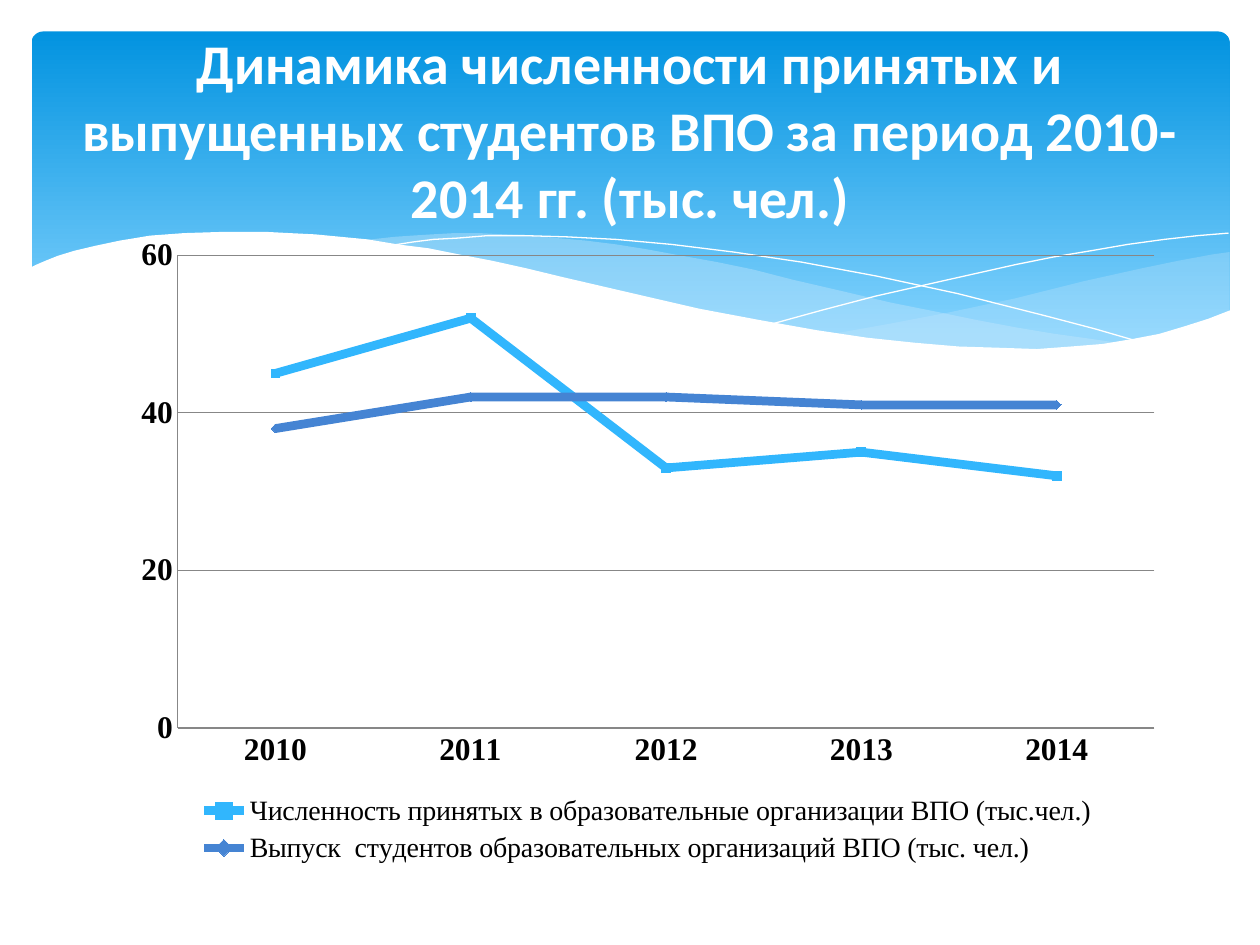
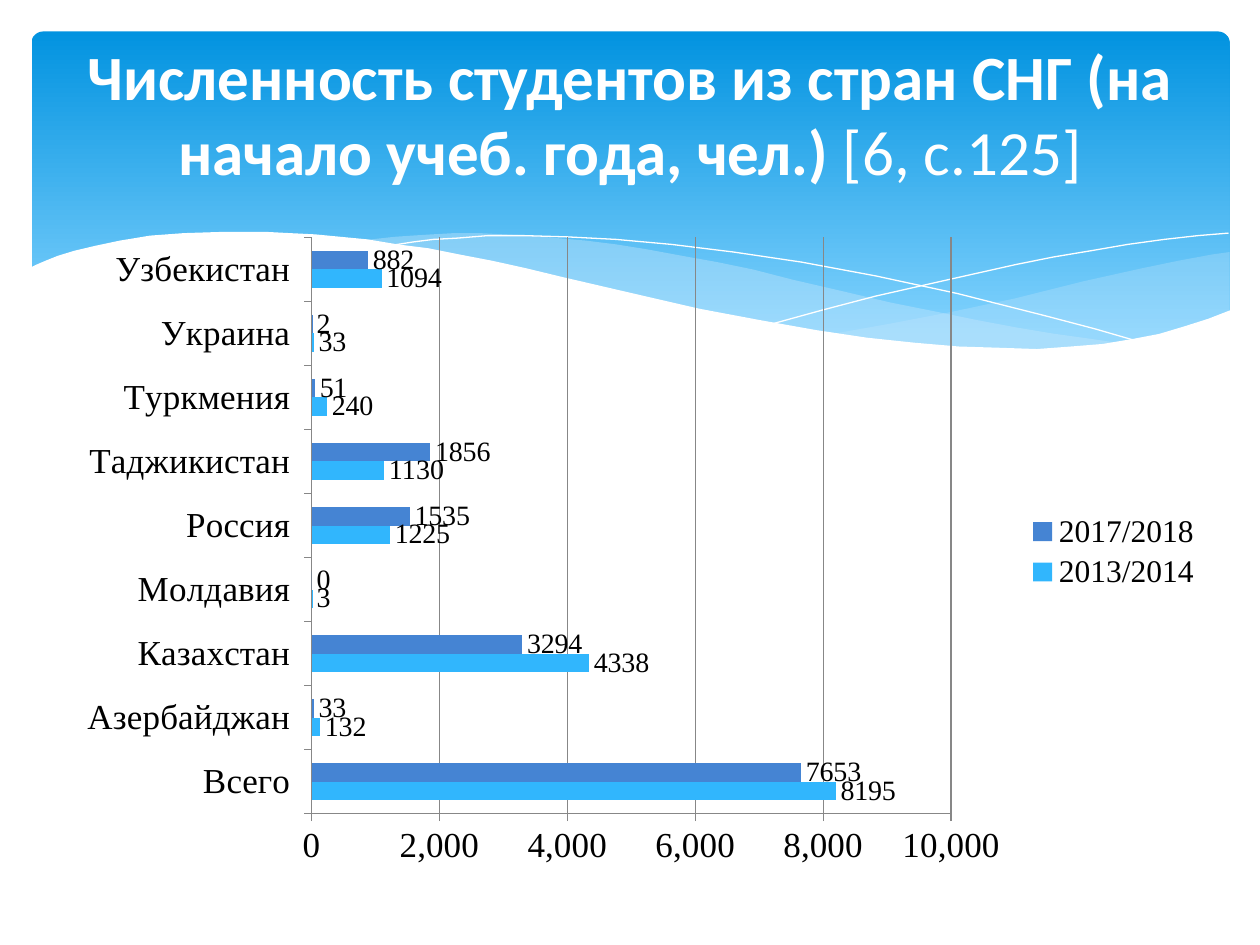
import pptx
import pptx.chart.data
import pptx.dml.color
import pptx.enum.chart
import pptx.enum.shapes
import pptx.enum.text
import pptx.oxml
import pptx.oxml.ns
import pptx.util
import lxml.etree

Inches = pptx.util.Inches
Pt = pptx.util.Pt
RGBColor = pptx.dml.color.RGBColor
Kind = pptx.enum.chart.XL_CHART_TYPE
Legend = pptx.enum.chart.XL_LEGEND_POSITION
Tick = pptx.enum.chart.XL_TICK_MARK

WHITE = RGBColor(0xFF, 0xFF, 0xFF)
BLACK = RGBColor(0, 0, 0)
GRID = RGBColor(0x87, 0x87, 0x87)
BAND_TOP = RGBColor(0x02, 0x93, 0xE0)
BAND_BOTTOM = RGBColor(0x83, 0xD3, 0xFE)
WAVE = RGBColor(0xC6, 0xE7, 0xFC)
SERIES_COLORS = [RGBColor(0x31, 0xB6, 0xFD), RGBColor(0x45, 0x84, 0xD3)]
TITLE_FONT = "Calibri"
CHART_FONT = "Times New Roman"

RIGHT_WAVE = [
    (976, 200), (962, 202), (935, 207), (906, 213), (861, 223), (805, 237),
    (753, 248), (706, 257), (661, 265), (691, 269), (719, 272), (745, 275),
    (769, 277), (803, 278), (835, 277), (863, 275), (889, 272), (913, 267),
    (935, 262), (949, 257), (963, 252), (976, 247)]
LONG_WAVE = [
    (893, 273), (866, 269), (837, 265), (807, 260), (775, 254), (741, 247),
    (706, 240), (668, 231), (629, 222), (598, 214), (569, 208), (541, 203),
    (514, 198), (489, 194), (465, 191), (442, 189), (420, 187), (399, 186),
    (380, 185), (361, 185), (344, 186), (328, 187), (313, 188), (286, 191),
    (323, 196), (362, 203), (404, 211), (449, 222), (491, 232), (530, 240),
    (566, 248), (601, 255), (634, 261), (665, 266), (695, 270), (722, 274),
    (748, 276), (773, 277), (796, 278), (828, 278), (857, 277), (876, 275)]
FALLING_LINE = [
    (309, 195), (328, 192), (344, 190), (363, 189), (387, 187), (416, 187),
    (450, 188), (489, 190), (533, 194), (582, 200), (636, 208), (695, 219),
    (760, 233), (831, 251), (869, 261), (907, 272)]
RISING_LINE = [
    (613, 257), (653, 246), (695, 235), (748, 223), (806, 210), (836, 204),
    (866, 199), (895, 194), (924, 190), (951, 187), (975, 185)]
WHITE_EDGE = [
    (977, 246), (959, 253), (940, 259), (920, 265), (899, 269), (875, 273),
    (850, 275), (823, 277), (793, 276), (761, 275), (726, 272), (688, 268),
    (648, 262), (603, 254), (555, 245), (503, 233), (447, 220), (418, 213),
    (391, 207), (365, 202), (340, 197), (316, 194), (292, 190), (271, 188),
    (250, 186), (230, 185), (211, 184), (177, 184), (146, 185), (119, 187),
    (95, 191), (76, 195), (59, 199), (46, 203), (36, 207), (29, 210),
    (23, 213), (23, 329), (977, 329)]
WAVES = [
    (RIGHT_WAVE, WAVE, 29),
    (LONG_WAVE, WAVE, 40),
    (FALLING_LINE, None, None),
    (RISING_LINE, None, None),
    (WHITE_EDGE, WHITE, 100),
]

CHARTS = [
    dict(
        title=[("Динамика численности принятых и выпущенных студентов ВПО "
                "за период 2010-2014 гг. (тыс. чел.)\v", True)],
        title_at=(0.5, 0.84, 9, 0.9), title_size=32,
        kind=Kind.LINE_MARKERS, at=(0.95, 1.78, 8.38, 5.12),
        plot=(0.055, 0.048, 0.925, 0.733),
        categories=["2010", "2011", "2012", "2013", "2014"],
        series=[
            ("Численность принятых в образовательные организации ВПО (тыс.чел.)",
             [45, 52, 33, 35, 32]),
            ("Выпуск  студентов образовательных организаций ВПО (тыс. чел.)",
             [38, 42, 42, 41, 41])],
        maximum=60, step=20, number_format="General", tick=Tick.NONE,
        axis_size=18, bold=True, legend=Legend.BOTTOM, legend_size=16),
    dict(
        title=[("Численность студентов из стран СНГ "
                "(на начало учеб. года, чел.) ", True),
               ("[6, с.125]\v", False)],
        title_at=(0.5, 0.76, 9, 0.87), title_size=36,
        kind=Kind.BAR_CLUSTERED, at=(0.51, 1.78, 9.13, 5.2),
        plot=(0.215, 0.02, 0.556, 0.88),
        categories=["Всего ", "Азербайджан ", "Казахстан ", "Молдавия ", "Россия ",
                    "Таджикистан ", "Туркмения ", "Украина ", "Узбекистан "],
        series=[
            ("2013/2014", [8195, 132, 4338, 3, 1225, 1130, 240, 33, 1094]),
            ("2017/2018", [7653, 33, 3294, 0, 1535, 1856, 51, 2, 882])],
        maximum=10000, step=2000, number_format="#,##0", tick=Tick.OUTSIDE,
        axis_size=20, bold=False, legend=Legend.RIGHT, legend_size=18),
]


def set_font(font, name, size, color, bold=False):
    font.name = name
    font.size = Pt(size)
    font.color.rgb = color
    font.bold = bold


deck = pptx.Presentation()
deck.slide_width = Inches(10)
deck.slide_height = Inches(7.5)
layout = deck.slide_layouts[5]
pages = [deck.slides.add_slide(layout) for chart_data in CHARTS]

canvas = pages[0].shapes
band = canvas.add_shape(
    pptx.enum.shapes.MSO_SHAPE.ROUNDED_RECTANGLE,
    Inches(0.25), Inches(0.25), Inches(9.51), Inches(2.7))
band.adjustments[0] = 0.034
band.fill.gradient()
band.fill.gradient_angle = 270
for stop, color, position in zip(
        band.fill.gradient_stops, [BAND_TOP, BAND_BOTTOM], [0, 0.9]):
    stop.color.rgb = color
    stop.position = position
band.line.fill.background()
backdrop = [band]

for points, color, opacity in WAVES:
    builder = canvas.build_freeform(*points[0], scale=Inches(0.01))
    builder.add_line_segments(points[1:], close=color is not None)
    wave = builder.convert_to_shape()
    if color is None:
        wave.fill.background()
        wave.line.color.rgb = WHITE
        wave.line.width = Pt(0)
    else:
        wave.fill.solid()
        wave.fill.fore_color.rgb = color
        wave.line.fill.background()
        if opacity < 100:
            tint = wave.element.spPr.find(".//" + pptx.oxml.ns.qn("a:srgbClr"))
            alpha = lxml.etree.SubElement(tint, pptx.oxml.ns.qn("a:alpha"))
            alpha.set("val", str(opacity * 1000))
    backdrop.append(wave)

for index, shape in enumerate(backdrop):
    shape.shadow.inherit = False
    layout.shapes.element.insert(2 + index, shape.element)

for page, item in zip(pages, CHARTS):
    title = page.shapes.title
    title.left, title.top, title.width, title.height = map(Inches, item["title_at"])
    frame = title.text_frame
    frame.word_wrap = True
    frame.auto_size = pptx.enum.text.MSO_AUTO_SIZE.NONE
    frame.vertical_anchor = pptx.enum.text.MSO_ANCHOR.MIDDLE
    para = frame.paragraphs[0]
    para.alignment = pptx.enum.text.PP_ALIGN.CENTER
    set_font(para.font, TITLE_FONT, item["title_size"], WHITE)
    for text, bold in item["title"]:
        span = para.add_run()
        span.text = text.rstrip("\v")
        set_font(span.font, TITLE_FONT, item["title_size"], WHITE, bold)
    para.add_line_break()

    data = pptx.chart.data.CategoryChartData()
    data.categories = item["categories"]
    for name, values in item["series"]:
        data.add_series(name, values)
    chart = page.shapes.add_chart(
        item["kind"], *map(Inches, item["at"]), data).chart
    set_font(chart.font, TITLE_FONT, 10, BLACK)
    chart.has_title = False
    chart.has_legend = True
    chart.legend.position = item["legend"]
    chart.legend.include_in_layout = False
    set_font(chart.legend.font, CHART_FONT, item["legend_size"], BLACK)

    for axis in (chart.category_axis, chart.value_axis):
        set_font(axis.tick_labels.font, CHART_FONT, item["axis_size"], BLACK, item["bold"])
        axis.major_tick_mark = item["tick"]
        axis.minor_tick_mark = Tick.NONE
        axis.format.line.color.rgb = GRID
    scale = chart.value_axis
    scale.minimum_scale = 0
    scale.maximum_scale = item["maximum"]
    scale.major_unit = item["step"]
    scale.tick_labels.number_format = item["number_format"]
    scale.tick_labels.number_format_is_linked = False
    scale.has_major_gridlines = True
    scale.major_gridlines.format.line.color.rgb = GRID

    plot = chart.plots[0]
    plot.vary_by_categories = False
    if item["kind"] == Kind.BAR_CLUSTERED:
        plot.gap_width = 150
        plot.overlap = 0
    for series, color in zip(plot.series, SERIES_COLORS):
        if item["kind"] == Kind.LINE_MARKERS:
            series.smooth = False
            series.format.line.color.rgb = color
            series.format.line.width = Pt(5)
            series.marker.size = 5
            series.marker.format.fill.solid()
            series.marker.format.fill.fore_color.rgb = color
            series.marker.format.line.color.rgb = color
        else:
            series.format.fill.solid()
            series.format.fill.fore_color.rgb = color
            labels = series.data_labels
            labels.show_value = True
            set_font(labels.font, CHART_FONT, 16, BLACK)

    area = plot._element.getparent()
    for old in area.findall(pptx.oxml.ns.qn("c:layout")):
        area.remove(old)
    frame_layout = lxml.etree.Element(pptx.oxml.ns.qn("c:layout"))
    manual = lxml.etree.SubElement(frame_layout, pptx.oxml.ns.qn("c:manualLayout"))
    settings = [("layoutTarget", "inner"), ("xMode", "edge"), ("yMode", "edge")]
    for tag, value in settings + list(zip("xywh", item["plot"])):
        lxml.etree.SubElement(manual, pptx.oxml.ns.qn("c:" + tag)).set("val", str(value))
    area.insert(0, frame_layout)

deck.save("out.pptx")
